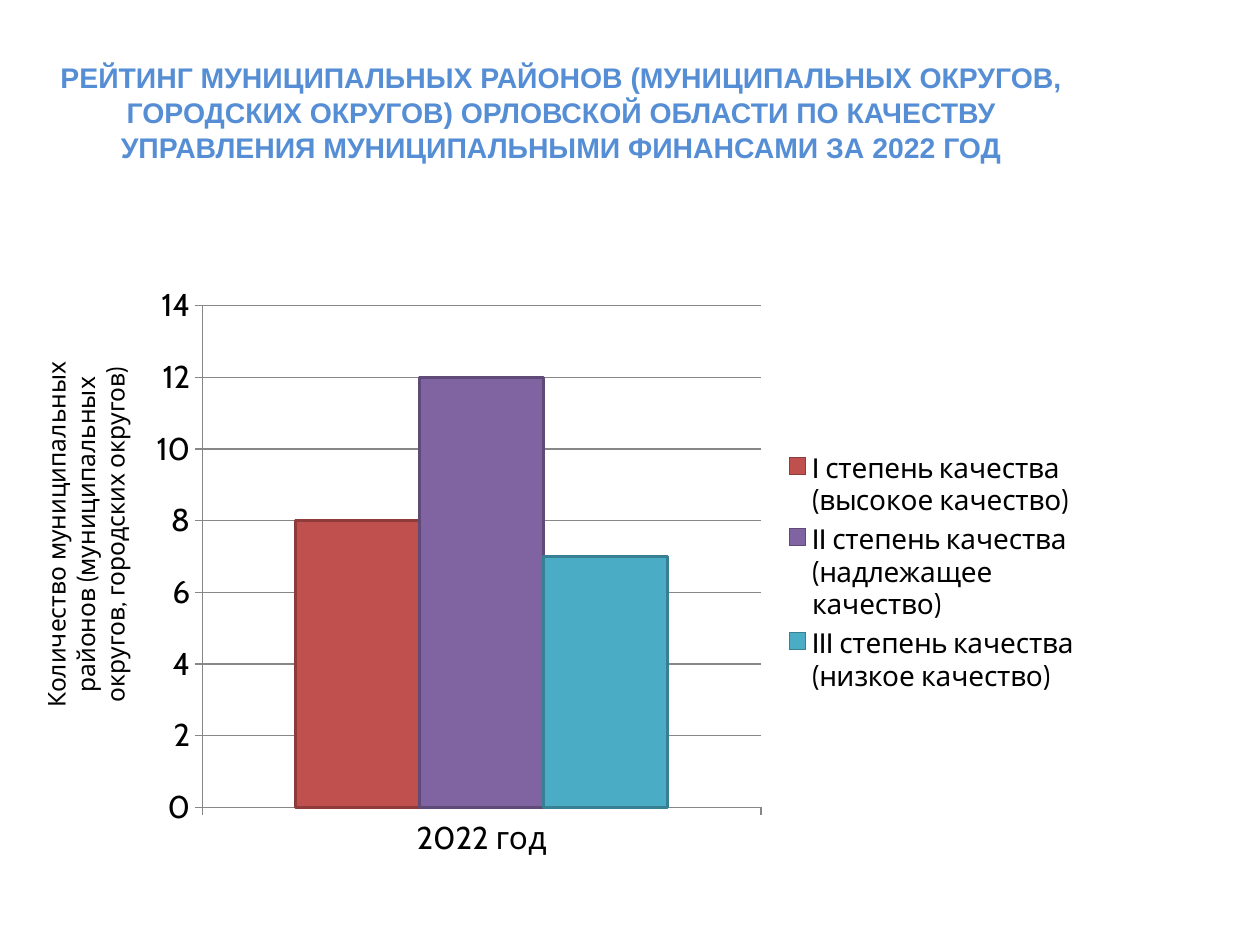
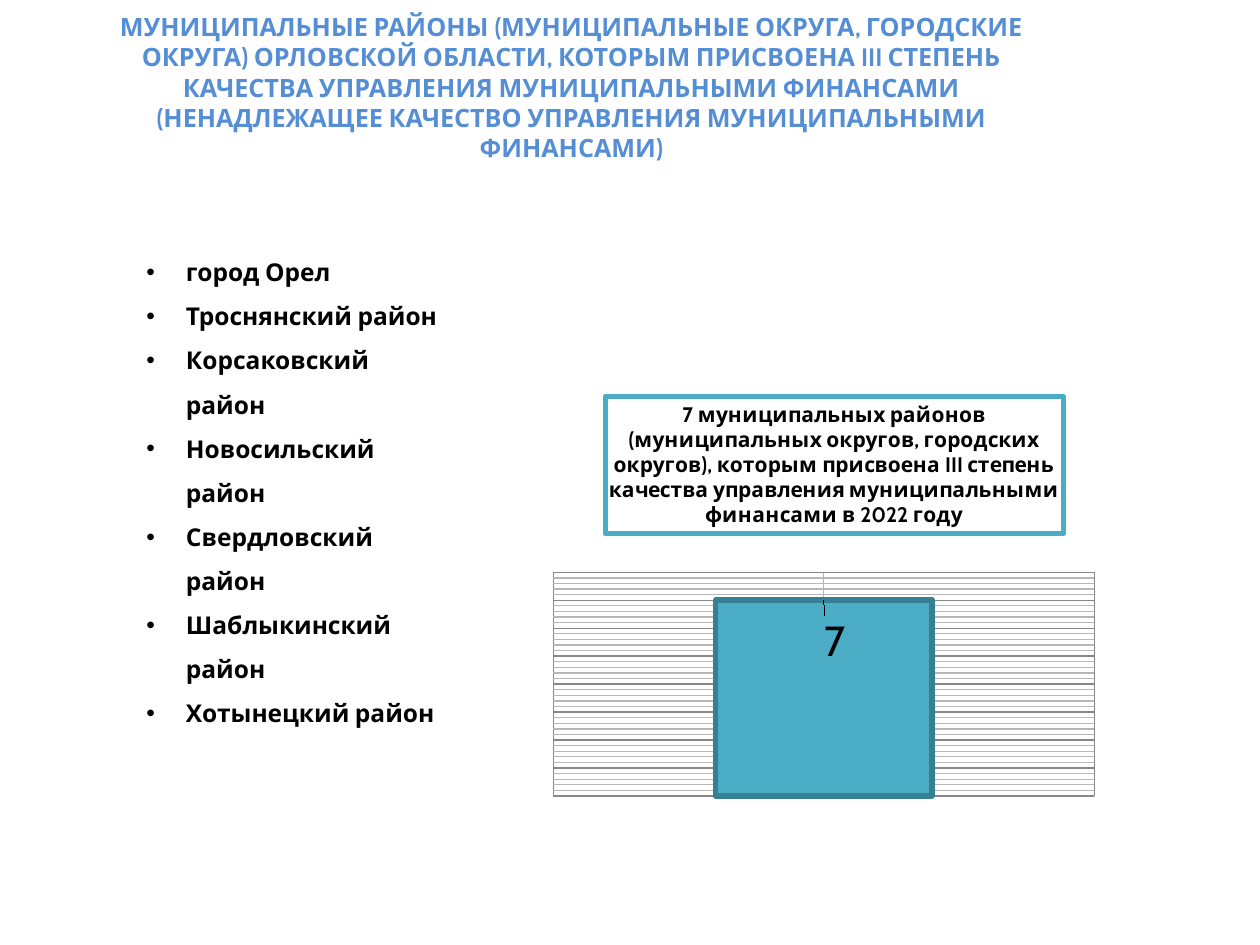
from lxml import etree
from pptx import Presentation
from pptx.chart.data import CategoryChartData
from pptx.dml.color import RGBColor
from pptx.enum import chart as ch, text
from pptx.oxml import ns
from pptx.util import Pt

BLUE, BLACK, GREY = "558ED5", "000000", "878787"
TEAL, TEAL_DARK = "4BACC6", "377F92"
FONT = "Cabin"


def style(font, size, color=BLACK, name=FONT, bold=False):
    font.size, font.name, font.bold = Pt(size), name, bold
    font.color.rgb = RGBColor.from_string(color)


def set_layout(parent, index, **values):
    """Give a chart part a manual layout as its child number index."""
    for old in parent.findall(ns.qn("c:layout")):
        parent.remove(old)
    layout = etree.Element(ns.qn("c:layout"))
    manual = etree.SubElement(layout, ns.qn("c:manualLayout"))
    for tag, value in values.items():
        etree.SubElement(manual, ns.qn("c:" + tag)).set("val", str(value))
    parent.insert(index, layout)


prs = Presentation()
prs.slide_width, prs.slide_height = Pt(720), Pt(540)

# Slides with their titles: layout, box, size, font, line spacing, wording
titles = [
    (5, (31, 15, 579, 79), 16.2, "Arial", 1.04,
     "РЕЙТИНГ МУНИЦИПАЛЬНЫХ РАЙОНОВ (МУНИЦИПАЛЬНЫХ ОКРУГОВ, ГОРОДСКИХ ОКРУГОВ) "
     "ОРЛОВСКОЙ ОБЛАСТИ ПО КАЧЕСТВУ УПРАВЛЕНИЯ МУНИЦИПАЛЬНЫМИ ФИНАНСАМИ ЗА 2022 ГОД"),
    (1, (60, 15, 533, 78), 14.4, FONT, 1.0,
     "МУНИЦИПАЛЬНЫЕ РАЙОНЫ (МУНИЦИПАЛЬНЫЕ ОКРУГА, ГОРОДСКИЕ ОКРУГА) ОРЛОВСКОЙ "
     "ОБЛАСТИ, КОТОРЫМ ПРИСВОЕНА III СТЕПЕНЬ КАЧЕСТВА УПРАВЛЕНИЯ МУНИЦИПАЛЬНЫМИ "
     "ФИНАНСАМИ (НЕНАДЛЕЖАЩЕЕ КАЧЕСТВО УПРАВЛЕНИЯ МУНИЦИПАЛЬНЫМИ ФИНАНСАМИ)"),
]
for layout_no, box, size, name, spacing, wording in titles:
    s = prs.slides.add_slide(prs.slide_layouts[layout_no])
    sp = s.shapes.title
    sp.left, sp.top, sp.width, sp.height = map(Pt, box)
    tf = sp.text_frame
    tf.auto_size = text.MSO_AUTO_SIZE.NONE
    tf.vertical_anchor = text.MSO_ANCHOR.BOTTOM
    tf.margin_left = tf.margin_right = Pt(2)
    tf.margin_top = tf.margin_bottom = 0
    p = tf.paragraphs[0]
    p.alignment, p.line_spacing = text.PP_ALIGN.CENTER, spacing
    r = p.add_run()
    r.text = wording
    style(r.font, size, BLUE, name, True)

rating, third = prs.slides
fill = rating.shapes.title.fill
fill.solid()
fill.fore_color.rgb = RGBColor.from_string("FFFFFF")

# Both column charts: slide, box, category, line width, series
charts = []
for s, box, category, width, series in [
    (rating, (78.5, 157, 546.5, 340), "2022 год", 1.5, [
        ("I степень качества (высокое качество)", 8, "C0504D", "8E3B39"),
        ("II степень качества (надлежащее качество)", 12, "8064A2", "5F4A78"),
        ("III степень качества (низкое качество)", 7, TEAL, TEAL_DARK)]),
    (third, (303, 196.5, 329, 272), "1", 3.15, [("Series 1", 7, TEAL, TEAL_DARK)]),
]:
    data = CategoryChartData()
    data.categories = [category]
    for name, value, *_ in series:
        data.add_series(name, [value])
    chart = s.shapes.add_chart(ch.XL_CHART_TYPE.COLUMN_CLUSTERED, *map(Pt, box), data).chart
    style(chart.font, 18)
    chart.has_title = chart.has_legend = False
    plot = chart.plots[0]
    plot.gap_width, plot.overlap, plot.vary_by_categories = 150, 0, False
    for ser, (_, _, color, edge) in zip(plot.series, series):
        ser.format.fill.solid()
        ser.format.fill.fore_color.rgb = RGBColor.from_string(color)
        ser.format.line.color.rgb = RGBColor.from_string(edge)
        ser.format.line.width = Pt(width)
    chart.value_axis.has_major_gridlines = True
    for axis in (chart.category_axis, chart.value_axis):
        axis.major_tick_mark = ch.XL_TICK_MARK.OUTSIDE
        axis.format.line.color.rgb = RGBColor.from_string(GREY)
    chart.value_axis.major_gridlines.format.line.color.rgb = RGBColor.from_string(GREY)
    charts.append(chart)
rating_chart, third_chart = charts

# Rating chart: legend and rotated axis caption
rating_chart.value_axis.maximum_scale = 14
rating_chart.value_axis.minimum_scale = 0
rating_chart.has_legend = True
legend = rating_chart.legend
legend.position, legend.include_in_layout = ch.XL_LEGEND_POSITION.RIGHT, False
style(legend.font, 16)

caption = rating.shapes.add_textbox(Pt(-77), Pt(276.5), Pt(252), Pt(58))
caption.rotation = 270
tf = caption.text_frame
tf.word_wrap = True
p = tf.paragraphs[0]
p.alignment = text.PP_ALIGN.CENTER
r = p.add_run()
r.text = "Количество муниципальных районов (муниципальных округов, городских округов)"
style(r.font, 14)

# Third degree chart: hidden axes with a fine grid
value_axis = third_chart.value_axis
value_axis.minimum_scale, value_axis.maximum_scale = 0, 8
value_axis.major_unit, value_axis.minor_unit = 1, 0.2
for axis in (third_chart.category_axis, value_axis):
    axis.visible = False
    axis.has_major_gridlines = axis.has_minor_gridlines = True
    axis.major_gridlines.format.line.color.rgb = RGBColor.from_string(GREY)
plot_area = third_chart.element.find(".//" + ns.qn("c:plotArea"))
set_layout(plot_area, 0, layoutTarget="inner", xMode="edge", yMode="edge",
           x=0.04, y=0.48, w=0.94, h=0.47)

# Framed chart title
title = third_chart.chart_title
title.include_in_layout = False
p = title.text_frame.paragraphs[0]
r = p.add_run()
r.text = ("7 муниципальных районов (муниципальных округов, городских округов), которым "
          "присвоена III степень качества управления муниципальными финансами в 2022 году")
style(r.font, 12, bold=True)
title.format.fill.solid()
title.format.fill.fore_color.rgb = RGBColor.from_string("FFFFFF")
title.format.line.color.rgb = RGBColor.from_string(TEAL)
title.format.line.width = Pt(3)
set_layout(title.element, 1, xMode="edge", yMode="edge", x=0.13, y=0.11)

# Value label moved into the column
label = third_chart.plots[0].series[0].points[0].data_label
style(label.font, 24)
label.position = ch.XL_LABEL_POSITION.OUTSIDE_END
set_layout(plot_area.find(".//" + ns.qn("c:dLbl")), 1, x=0.02, y=0.15)

# List of districts
body = third.placeholders[1]
body.left, body.top, body.width, body.height = map(Pt, (76.5, 135, 186.5, 285))
tf = body.text_frame
tf.auto_size, tf.word_wrap = text.MSO_AUTO_SIZE.NONE, True
districts = ["город Орел"] + [name + " район" for name in (
    "Троснянский", "Корсаковский", "Новосильский", "Свердловский", "Шаблыкинский",
    "Хотынецкий")]
for i, district in enumerate(districts):
    p = tf.add_paragraph() if i else tf.paragraphs[0]
    p.alignment, p.line_spacing, p.space_before = text.PP_ALIGN.JUSTIFY, 1.5, Pt(0)
    pPr = p._p.get_or_add_pPr()
    pPr.set("marL", str(Pt(22.5)))
    pPr.set("indent", str(Pt(-22.5)))
    bullet = etree.SubElement(pPr, ns.qn("a:buChar"))
    bullet.set("char", "•")
    r = p.add_run()
    r.text = district
    style(r.font, 14, bold=True)

prs.save("out.pptx")
